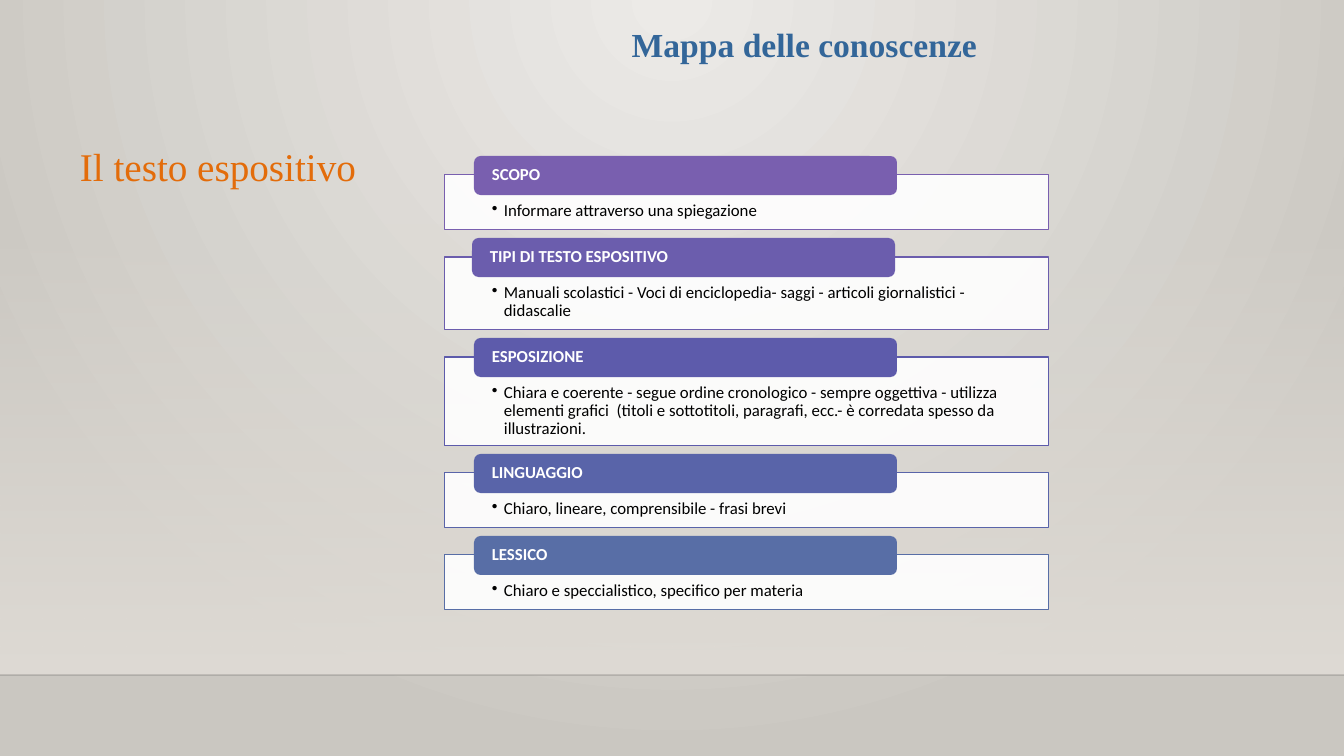
import pptx
import pptx.util
import pptx.dml.color
import pptx.enum.shapes
import pptx.enum.text
import pptx.oxml
import pptx.oxml.ns

SCALE = 914400 / 100.8
WIDTH, HEIGHT = 1344, 756
SHAPES = pptx.enum.shapes.MSO_SHAPE
ALIGN = pptx.enum.text.PP_ALIGN
ANCHOR = pptx.enum.text.MSO_ANCHOR
SERIF, SANS = "Times New Roman", "Calibri"

# Cards: heading, text, colour, body height, shift of the tab
CARDS = [
    ("SCOPO", "Informare attraverso una spiegazione", "795FAF", 55, 0),
    ("TIPI DI TESTO ESPOSITIVO",
     "Manuali scolastici - Voci di enciclopedia- saggi - articoli "
     "giornalistici - didascalie", "6B5DAD", 73, -2),
    ("ESPOSIZIONE",
     "Chiara e coerente - segue ordine cronologico - sempre oggettiva - "
     "utilizza elementi grafici  (titoli e sottotitoli, paragrafi, ecc.- "
     "è corredata spesso da illustrazioni.", "5D5BAB", 89, 0),
    ("LINGUAGGIO", "Chiaro, lineare, comprensibile - frasi brevi",
     "5964A9", 55, 0),
    ("LESSICO", "Chiaro e speccialistico, specifico per materia",
     "586EA6", 55, 0),
]
TOP, GAP = 175, 27


def px(num):
    return pptx.util.Emu(round(num * SCALE))


def tint(text):
    return pptx.dml.color.RGBColor.from_string(text)


def node(root, tag, **attrs):
    item = pptx.oxml.ns.qn(tag)
    child = root.makeelement(item, attrs)
    root.append(child)
    return child


def fade(root, share):
    """Set the opacity, in percent, of the last colour under root."""
    node(root.xpath(".//a:srgbClr")[-1], "a:alpha", val=str(share * 1000))


def blend(fill, first, last):
    fill.gradient()
    for stop, color in zip(fill.gradient_stops, (first, last)):
        stop.color.rgb = tint(color)


def shape(slide, kind, box, color=None, edge=None):
    item = slide.shapes.add_shape(kind, *map(px, box))
    item.shadow.inherit = False
    if color:
        item.fill.solid()
        item.fill.fore_color.rgb = tint(color)
    if edge:
        item.line.color.rgb = tint(edge)
        item.line.width = pptx.util.Pt(0.75)
    else:
        item.line.fill.background()
    return item


def write(item, text, size, face, color, align, bold=False,
          inset=(10, 5, 10, 5), anchor=ANCHOR.TOP, bullet=False):
    frame = item.text_frame
    frame.word_wrap = True
    frame.vertical_anchor = anchor
    (frame.margin_left, frame.margin_top,
     frame.margin_right, frame.margin_bottom) = map(px, inset)
    para = frame.paragraphs[0]
    if bullet:
        props = para._p.get_or_add_pPr()
        props.set("marL", str(px(12)))
        props.set("indent", str(px(-12)))
        node(props, "a:buChar", char="•")
    para.alignment = align
    run = para.add_run()
    run.text = text
    run.font.size = pptx.util.Pt(size)
    run.font.name = face
    run.font.bold = bold
    run.font.color.rgb = tint(color)
    return para


def label(slide, box, *args, **style):
    write(slide.shapes.add_textbox(*map(px, box)), *args, **style)


def card(slide, top, head, text, color, height, shift):
    body = shape(slide, SHAPES.RECTANGLE, (445, top, 604, height),
                 "FFFFFF", color)
    fade(body.fill._xPr.find(pptx.oxml.ns.qn("a:solidFill")), 90)
    para = write(body, text, 12, SANS, "000000", ALIGN.LEFT,
                 inset=(47, 27, 47, 9), bullet=True)
    para.line_spacing = 0.9
    tab = shape(slide, SHAPES.ROUNDED_RECTANGLE,
                (474 + shift, top - 19, 423, 39), color)
    para = write(tab, head, 12, SANS, "FFFFFF", ALIGN.LEFT, bold=True,
                 inset=(16, 0, 16, 0), anchor=ANCHOR.MIDDLE)
    para.line_spacing = 0.9


def scene(slide):
    # Radial background, lit from the top centre
    blend(slide.background.fill, "ECEAE7", "CAC7C1")
    grad = slide._element.xpath(".//p:bgPr/a:gradFill")[0]
    for line in grad.xpath("a:lin"):
        grad.remove(line)
    ring = node(grad, "a:path", path="circle")
    node(ring, "a:fillToRect", l="43000", t="0", r="43000", b="100000")

    # Wall that fades in downwards
    wall = shape(slide, SHAPES.RECTANGLE, (0, 223, WIDTH, 452))
    blend(wall.fill, "DFDBD5", "DFDBD5")
    wall.fill.gradient_angle = 270
    fade(wall._element.xpath(".//a:gs")[0], 0)

    # Floor line
    floor = slide.shapes.add_connector(
        pptx.enum.shapes.MSO_CONNECTOR.STRAIGHT,
        *map(px, (0, 675, WIDTH, 675)))
    floor.line.color.rgb = tint("000001")
    floor.line.width = pptx.util.Pt(1)
    fade(floor._element, 20)
    node(floor._element.spPr, "a:effectLst")


def main():
    deck = pptx.Presentation()
    deck.slide_width, deck.slide_height = px(WIDTH), px(HEIGHT)
    slide = deck.slides.add_slide(deck.slide_layouts[6])
    scene(slide)

    # Titles
    label(slide, (291, 19, 696, 79), "Mappa delle conoscenze", 24, SERIF,
          "336699", ALIGN.RIGHT, bold=True)
    label(slide, (41, 137, 354, 44), "Il testo espositivo", 28, SERIF,
          "E36C0A", ALIGN.CENTER)

    # Stack of cards
    top = TOP
    for head, text, color, height, shift in CARDS:
        card(slide, top, head, text, color, height, shift)
        top += height + GAP

    deck.save("out.pptx")


if __name__ == "__main__":
    main()
